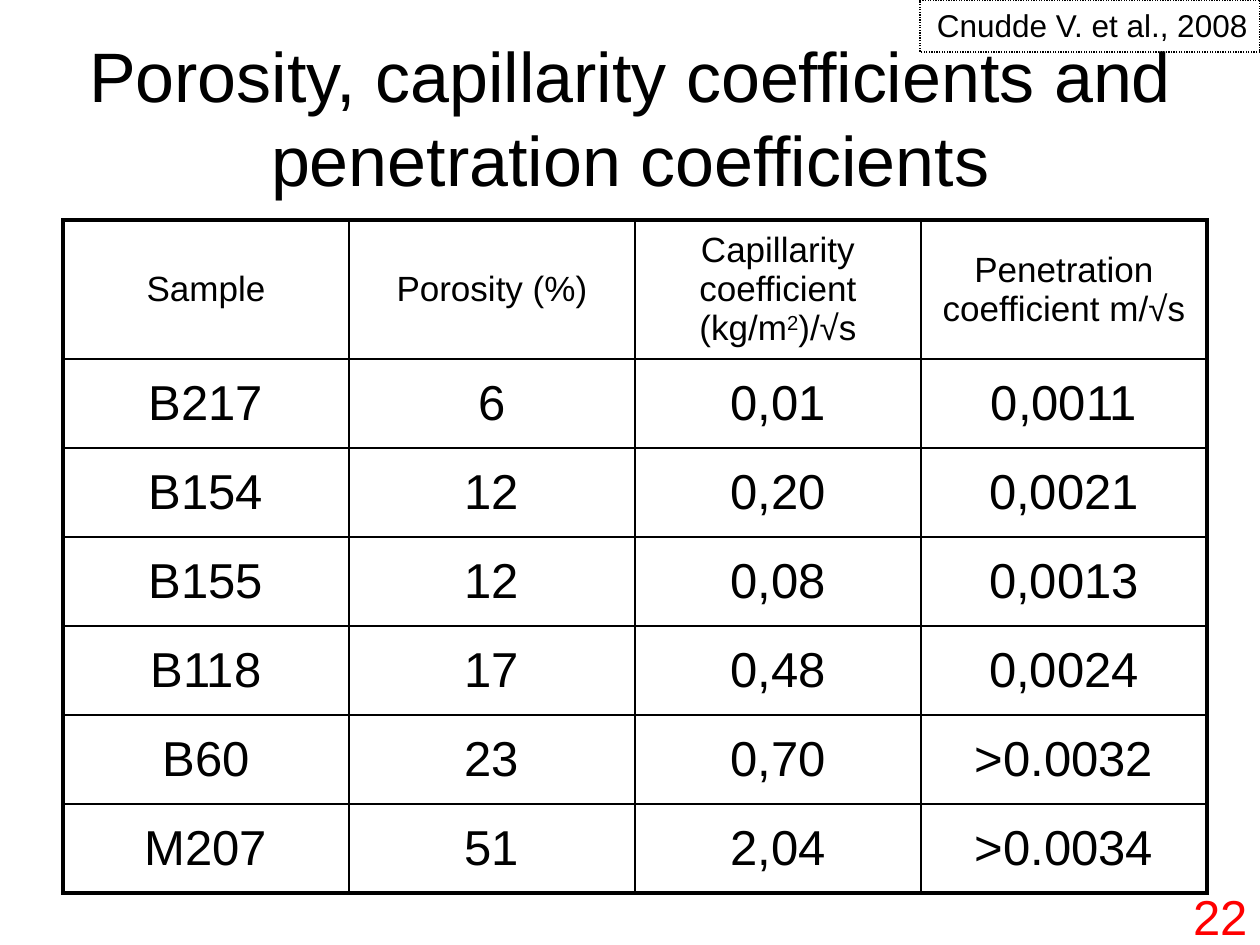
import pptx
import pptx.util
import pptx.dml.color
import pptx.enum.dml
import pptx.enum.shapes
import pptx.enum.text
import pptx.oxml
import pptx.oxml.ns

PX = 914400 / 126
FONT = "Arial"
COLORS = {"ink": "000000", "number": "FF0000"}
ALIGN = pptx.enum.text.PP_ALIGN
ANCHOR = pptx.enum.text.MSO_ANCHOR
THIN, THICK = 1, 2.25
SUPERSCRIPT = "30000"

HEADINGS = [
    ["Sample"],
    ["Porosity (%)"],
    ["Capillarity coefficient (kg/m", "2", ")/√s"],
    ["Penetration coefficient m/√s"],
]
SAMPLES = [
    ["B217", "6", "0,01", "0,0011"],
    ["B154", "12", "0,20", "0,0021"],
    ["B155", "12", "0,08", "0,0013"],
    ["B118", "17", "0,48", "0,0024"],
    ["B60", "23", "0,70", ">0.0032"],
    ["M207", "51", "2,04", ">0.0034"],
]


def px(count):
    return pptx.util.Emu(round(count * PX))


def rgb(name):
    return pptx.dml.color.RGBColor.from_string(COLORS[name])


def write(paragraph, parts, size, align, color="ink"):
    for index, part in enumerate(parts):
        run = paragraph.add_run()
        run.text = part
        if index % 2:
            run._r.get_or_add_rPr().set("baseline", SUPERSCRIPT)
    paragraph.alignment = align
    paragraph.font.name = FONT
    paragraph.font.size = pptx.util.Pt(size)
    paragraph.font.color.rgb = rgb(color)


def add_title(slide, text):
    title = slide.shapes.title
    title.left, title.top, title.width, title.height = map(px, (63, 38, 1134, 158))
    frame = title.text_frame
    frame.auto_size = pptx.enum.text.MSO_AUTO_SIZE.NONE
    frame.vertical_anchor = ANCHOR.MIDDLE
    write(frame.paragraphs[0], [text], 40, ALIGN.CENTER)


def add_citation(slide, text):
    citation = slide.shapes.add_shape(
        pptx.enum.shapes.MSO_SHAPE.RECTANGLE, *map(px, (920, 0, 340, 52)))
    citation.shadow.inherit = False
    citation.fill.background()
    citation.line.color.rgb = rgb("ink")
    citation.line.width = pptx.util.Pt(0.75)
    citation.line.dash_style = pptx.enum.dml.MSO_LINE.ROUND_DOT
    frame = citation.text_frame
    frame.word_wrap = False
    frame.vertical_anchor = ANCHOR.TOP
    write(frame.paragraphs[0], [text], 18, ALIGN.RIGHT)


def add_page_number(slide, text):
    number = slide.shapes.add_textbox(*map(px, (966, 880, 294, 65)))
    number.text_frame.word_wrap = True
    write(number.text_frame.paragraphs[0], [text], 28, ALIGN.RIGHT, "number")


def set_borders(cell, outer_edges):
    properties = cell._tc.get_or_add_tcPr()
    for side in "LRTB":
        width = pptx.util.Pt(THICK if side in outer_edges else THIN)
        properties.append(pptx.oxml.parse_xml(
            f'<a:ln{side} {pptx.oxml.ns.nsdecls("a")} w="{width}">'
            f'<a:solidFill><a:srgbClr val="{COLORS["ink"]}"/></a:solidFill>'
            f'<a:prstDash val="solid"/></a:ln{side}>'))


def fill_cell(cell, parts, size, margins, outer_edges):
    set_borders(cell, outer_edges)
    cell.fill.background()
    cell.vertical_anchor = ANCHOR.MIDDLE
    side, end = map(pptx.util.Inches, margins)
    cell.margin_left = cell.margin_right = side
    cell.margin_top = cell.margin_bottom = end
    write(cell.text_frame.paragraphs[0], parts, size, ALIGN.CENTER)


def add_coefficient_table(slide):
    rows = [HEADINGS] + [[[value] for value in sample] for sample in SAMPLES]
    last_row, last_column = len(rows) - 1, len(HEADINGS) - 1
    heights = [139] + [89] * len(SAMPLES)
    column_width = 286
    table = slide.shapes.add_table(
        len(rows), len(HEADINGS), px(63), px(220),
        px(column_width * len(HEADINGS)), px(sum(heights))).table
    table.first_row = False
    table.horz_banding = False
    for column in table.columns:
        column.width = px(column_width)
    for r, (height, row) in enumerate(zip(heights, rows)):
        table.rows[r].height = px(height)
        size, margins = (28, (0, 0)) if r else (20, (0.1, 0.05))
        for c, parts in enumerate(row):
            edges = {"L": c == 0, "R": c == last_column,
                     "T": r == 0, "B": r == last_row}
            outer_edges = [side for side, outer in edges.items() if outer]
            fill_cell(table.cell(r, c), parts, size, margins, outer_edges)


def main():
    presentation = pptx.Presentation()
    presentation.slide_width = px(1260)
    presentation.slide_height = px(945)
    slide = presentation.slides.add_slide(presentation.slide_layouts[5])
    add_title(slide, "Porosity, capillarity coefficients and penetration coefficients")
    add_citation(slide, "Cnudde V. et al., 2008")
    add_coefficient_table(slide)
    add_page_number(slide, "22")
    presentation.save("out.pptx")


if __name__ == "__main__":
    main()
